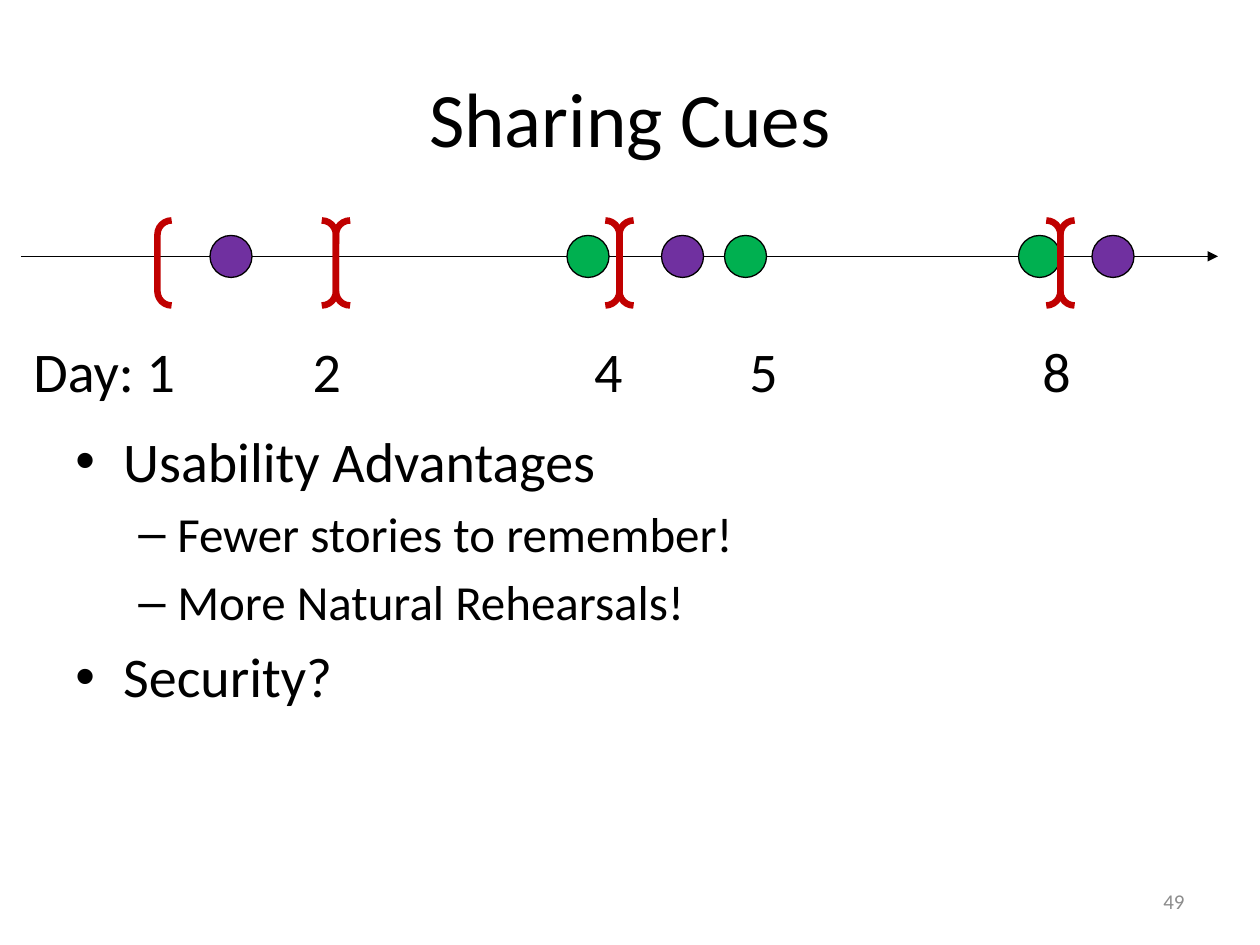
from lxml.etree import SubElement
from pptx import Presentation
from pptx.dml.color import RGBColor
from pptx.enum.shapes import MSO_CONNECTOR, MSO_SHAPE as SHAPE
from pptx.enum.text import MSO_ANCHOR as ANCHOR, PP_ALIGN as ALIGN
from pptx.oxml.ns import qn
from pptx.util import Inches, Pt

BLACK = RGBColor(0x00, 0x00, 0x00)
GRAY = RGBColor(0x8C, 0x8C, 0x8C)
GREEN = RGBColor(0x00, 0xB0, 0x50)
PURPLE = RGBColor(0x70, 0x30, 0xA0)
RED = RGBColor(0xC0, 0x00, 0x00)

FONT = "Calibri"
COLUMNS, ROWS = 120, 90  # twelve grid units to the inch

# Timeline columns, counted from the left end of the axis
DOT_SIZE = 4
DOTS = [(GREEN, (52, 95, 67)), (PURPLE, (18, 61, 102))]
INTERVAL_BOUNDS = [13, 30, 57, 99, 141]
DAY_TABS = [("2", 26.6), ("4", 53.4), ("5", 68.2), ("8", 96.1)]

# Bullet sign, size, left margin and hanging indent in inches, by level
LEVELS = [("•", 32, 0.38, 0.38), ("–", 28, 0.81, 0.31)]
BULLETS = [
    ("Usability Advantages", 0),
    ("Fewer stories to remember!", 1),
    ("More Natural Rehearsals!", 1),
    ("Security?", 0),
]


def grid(units):
    return Inches(units / 12)


def add_frame(slide, box, anchor=ANCHOR.TOP):
    frame = slide.shapes.add_textbox(*map(grid, box)).text_frame
    frame.word_wrap = True
    frame.vertical_anchor = anchor
    return frame


def write(paragraph, text, size=32, color=BLACK, align=ALIGN.LEFT):
    paragraph.alignment = align
    run = paragraph.add_run()
    run.text = text
    run.font.name = FONT
    run.font.size = Pt(size)
    run.font.color.rgb = color


def add_outline(slide, kind, box, line_color, line_width, fill=None):
    shape = slide.shapes.add_shape(kind, *map(grid, box))
    shape.shadow.inherit = False
    shape.line.color.rgb = line_color
    shape.line.width = Pt(line_width)
    if fill is None:
        shape.fill.background()
    else:
        shape.fill.solid()
        shape.fill.fore_color.rgb = fill


def add_arrow(slide, left, right, middle):
    arrow = slide.shapes.add_connector(
        MSO_CONNECTOR.STRAIGHT, grid(left), grid(middle), grid(right), grid(middle))
    arrow.line.color.rgb = BLACK
    arrow.line.width = Pt(0.75)
    SubElement(arrow.line._get_or_add_ln(), qn("a:tailEnd"), type="triangle")
    SubElement(arrow._element.spPr, qn("a:effectLst"))


def add_day_labels(slide, box):
    paragraph = add_frame(slide, box).paragraphs[0]
    write(paragraph, "\t".join(["Day: 1"] + [day for day, _ in DAY_TABS]))
    tabs = SubElement(paragraph._p.get_or_add_pPr(), qn("a:tabLst"))
    for _, column in DAY_TABS:
        SubElement(tabs, qn("a:tab"), pos=str(grid(column)), algn="l")


def add_timeline(slide, box):
    """Axis with day labels, rehearsal dots and bracketed intervals."""
    left, top, width, height = box
    bracket_height = height * 0.45
    middle = top + height * 0.19
    add_arrow(slide, left, left + width, middle)
    add_day_labels(slide, (left, top + height * 0.58, width, height * 0.42))
    for color, columns in DOTS:
        for column in columns:
            dot = (left + column, middle - DOT_SIZE / 2, DOT_SIZE, DOT_SIZE)
            add_outline(slide, SHAPE.OVAL, dot, BLACK, 0.75, color)
    for start, end in zip(INTERVAL_BOUNDS, INTERVAL_BOUNDS[1:]):
        interval = (left + start, top, end - start, bracket_height)
        add_outline(slide, SHAPE.DOUBLE_BRACKET, interval, RED, 3.75)


def add_bullets(slide, box):
    frame = add_frame(slide, box)
    for index, (text, level) in enumerate(BULLETS):
        paragraph = frame.add_paragraph() if index else frame.paragraphs[0]
        sign, size, margin, hanging = LEVELS[level]
        paragraph.level = level
        paragraph.space_before = Pt(size * 0.2)
        write(paragraph, text, size=size)
        properties = paragraph._p.get_or_add_pPr()
        properties.set("marL", str(Inches(margin)))
        properties.set("indent", str(-Inches(hanging)))
        SubElement(properties, qn("a:buFont"), typeface="Arial")
        SubElement(properties, qn("a:buChar"), char=sign)


def add_title(slide, box):
    write(add_frame(slide, box, ANCHOR.MIDDLE).paragraphs[0],
          "Sharing Cues", size=44, align=ALIGN.CENTER)


def add_page_number(slide, box):
    write(add_frame(slide, box, ANCHOR.MIDDLE).paragraphs[0],
          "49", size=12, color=GRAY, align=ALIGN.RIGHT)


def main():
    presentation = Presentation()
    presentation.slide_width = grid(COLUMNS)
    presentation.slide_height = grid(ROWS)
    slide = presentation.slides.add_slide(presentation.slide_layouts[6])
    add_title(slide, (6, 3.6, 108, 15))
    add_bullets(slide, (6, 40, 108, 40.4))
    add_timeline(slide, (2, 21, 114, 18))
    add_page_number(slide, (86, 83.4, 28, 4.8))
    presentation.save("out.pptx")


if __name__ == "__main__":
    main()
